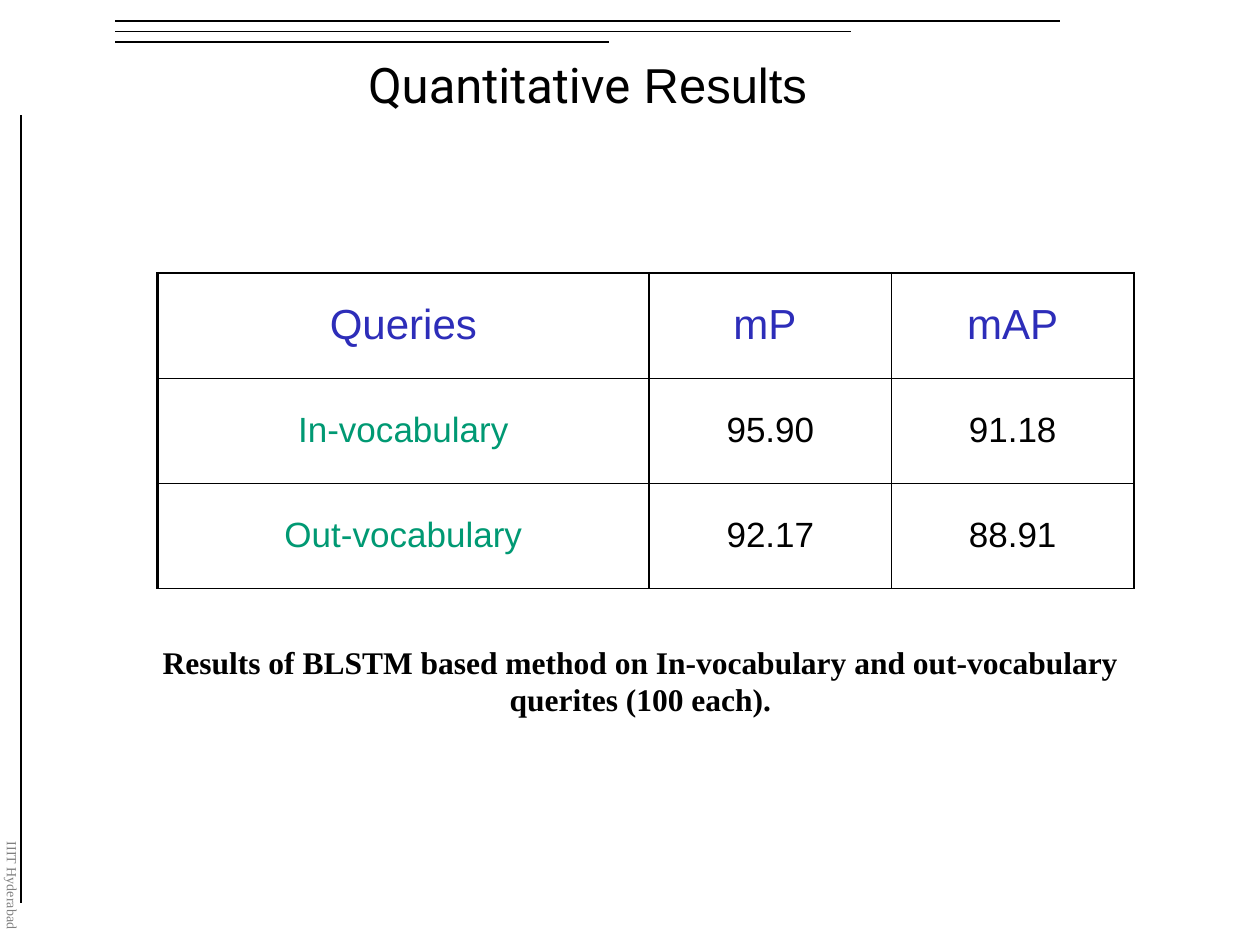
from lxml.etree import SubElement
from pptx import Presentation
from pptx.dml.color import RGBColor
from pptx.enum.shapes import MSO_CONNECTOR
from pptx.enum.text import MSO_ANCHOR, PP_ALIGN
from pptx.oxml.ns import qn
from pptx.util import Pt

BLACK, GREY, BLUE, GREEN, WHITE = "000000", "808080", "2D2DB9", "009973", "FFFFFF"
THIN, MEDIUM, THICK = 0.45, 1.08, 1.47


def color(hex_code):
    return RGBColor.from_string(hex_code)


class ResultsSlide:
    """Holds the slide being built and its common style."""

    table_font = "Arial"
    caption_font = "Times New Roman"
    rule_width = 0.75

    def __init__(self, presentation):
        self.slide = presentation.slides.add_slide(presentation.slide_layouts[6])

    def style(self, font, name, size, hex_code, bold=False):
        font.name, font.size, font.bold = name, Pt(size), bold
        font.color.rgb = color(hex_code)

    def rule(self, x1, y1, x2, y2):
        line = self.slide.shapes.add_connector(
            MSO_CONNECTOR.STRAIGHT, Pt(x1), Pt(y1), Pt(x2), Pt(y2))
        line.line.color.rgb = color(BLACK)
        line.line.width = Pt(self.rule_width)
        SubElement(line._element.spPr, qn("a:effectLst"))

    def text(self, left, top, width, height, runs, top_inset=7.2,
             align=PP_ALIGN.CENTER, vertical=False):
        """Add one paragraph; each run is (words, font, size, colour, bold)."""
        box = self.slide.shapes.add_textbox(Pt(left), Pt(top), Pt(width), Pt(height))
        frame = box.text_frame
        frame.word_wrap = True
        frame.margin_top = Pt(top_inset)
        if vertical:
            frame._txBody.bodyPr.set("vert", "eaVert")
        paragraph = frame.paragraphs[0]
        paragraph.alignment = align
        for words, *look in runs:
            run = paragraph.add_run()
            run.text = words
            self.style(run.font if len(runs) > 1 else paragraph.font, *look)

    def border(self, cell, side, width):
        edge = SubElement(cell._tc.get_or_add_tcPr(), qn(f"a:ln{side}"),
                          w=str(int(Pt(width))))
        fill = SubElement(edge, qn("a:solidFill"))
        SubElement(fill, qn("a:srgbClr"), val=BLACK)

    def cell(self, cell, words, size, hex_code, borders):
        cell.text = words
        cell.vertical_anchor = MSO_ANCHOR.MIDDLE
        cell.margin_top, cell.margin_bottom = Pt(5), Pt(3.6)
        paragraph = cell.text_frame.paragraphs[0]
        paragraph.alignment = PP_ALIGN.CENTER
        paragraph.line_spacing = 0.93
        self.style(paragraph.font, self.table_font, size, hex_code)
        for side, width in zip("LRTB", borders):
            self.border(cell, side, width)
        cell.fill.solid()
        cell.fill.fore_color.rgb = color(WHITE)

    def table(self, left, top, column_widths, row_height, rows):
        count = len(column_widths)
        table = self.slide.shapes.add_table(
            len(rows), count, Pt(left), Pt(top),
            Pt(sum(column_widths)), Pt(row_height * len(rows))).table
        table.first_row = table.horz_banding = False
        for column, width in zip(table.columns, column_widths):
            column.width = Pt(width)
        verticals = [THICK, MEDIUM] + [THIN] * (count - 2) + [THICK]
        for r, values in enumerate(rows):
            table.rows[r].height = Pt(row_height)
            for c, value in enumerate(values):
                if r == 0:
                    size, hex_code = 24, BLUE
                else:
                    size, hex_code = 20, BLACK if c else GREEN
                borders = (verticals[c], verticals[c + 1], THIN if r else THICK, THIN)
                self.cell(table.cell(r, c), value, size, hex_code, borders)


def main():
    presentation = Presentation()
    presentation.slide_width, presentation.slide_height = Pt(720), Pt(540)
    page = ResultsSlide(presentation)

    for y, right in ((12, 606), (18, 486), (24, 348)):
        page.rule(66, y, right, y)
    page.rule(12, 66, 12, 516)
    page.text(-8.5, 474, 24, 66,
              [("IIIT Hyderabad", page.caption_font, 8, GREY)],
              top_inset=3.6, align=PP_ALIGN.LEFT, vertical=True)

    page.text(30, 24, 611.5, 89,
              [("Quantitative", "Roboto", 28, BLACK),
               (" Results", "Arial", 28, BLACK)])
    page.table(90, 156, (281, 138.5, 138.5), 60, [
        ("Queries", "mP ", "mAP"),
        ("In-vocabulary", "95.90", "91.18"),
        ("Out-vocabulary", "92.17", "88.91"),
    ])
    page.text(84, 360, 564, 54,
              [("Results of BLSTM based method on In-vocabulary and "
                "out-vocabulary querites (100 each).",
                page.caption_font, 18, BLACK, True)])

    presentation.save("out.pptx")


if __name__ == "__main__":
    main()
